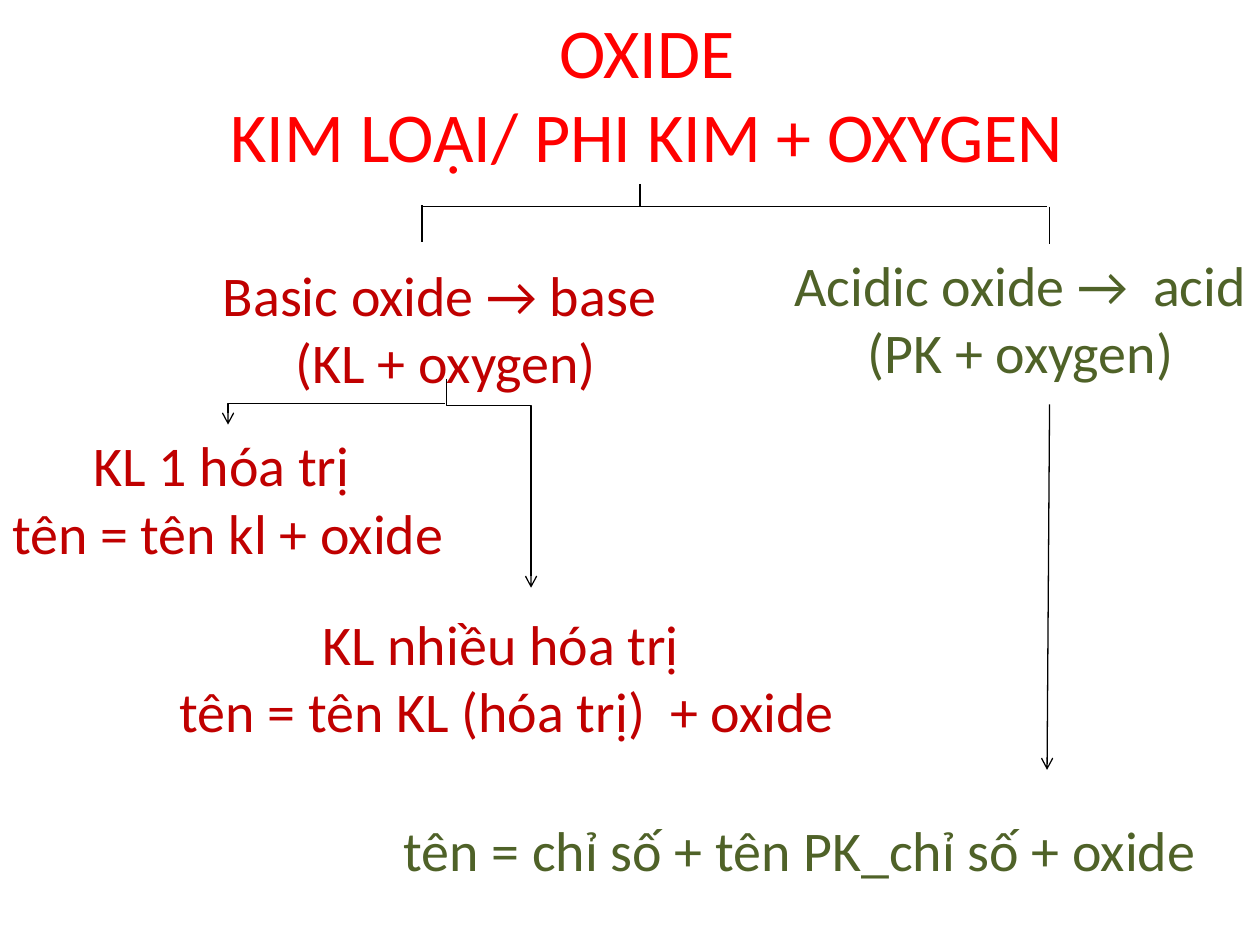
"""Build the slide that classifies oxides and gives their naming rules."""
from typing import NamedTuple

from lxml import etree
from pptx import Presentation
from pptx.dml.color import RGBColor
from pptx.enum.shapes import MSO_CONNECTOR
from pptx.enum.text import MSO_AUTO_SIZE, PP_ALIGN
from pptx.oxml.ns import qn
from pptx.util import Inches, Pt

STRAIGHT, ELBOW = MSO_CONNECTOR.STRAIGHT, MSO_CONNECTOR.ELBOW
CENTER = PP_ALIGN.CENTER
NO_FIT = MSO_AUTO_SIZE.NONE
RED, DARK_RED, GREEN, BLACK = "FF0000", "C00000", "4F6228", "000000"


class Label(NamedTuple):
    """A centred text block; lengths in inches, size in points."""
    left: float
    top: float
    width: float
    height: float
    lines: tuple[str, ...]
    color: str
    size: int = 32


class Link(NamedTuple):
    """A connector; its ends are given before it is rotated."""
    x1: float
    y1: float
    x2: float
    y2: float
    arrow: bool = False
    preset: str = "line"
    rotation: int = 0
    bend: float | None = None


LABELS = [
    Label(1.6, 0.02, 7.07, 1.45, ("OXIDE", "KIM LOẠI/ PHI KIM + OXYGEN"), RED, 40),
    Label(1.14, 2.02, 4.8, 1.18, ("Basic oxide → base ", "(KL + oxygen)"), DARK_RED),
    Label(5.7, 1.94, 4.8, 1.18, ("Acidic oxide →  acid", "(PK + oxygen)"), GREEN),
    Label(-0.59, 3.37, 4.8, 1.72, ("KL 1 hóa trị ", "tên = tên kl + oxide"), DARK_RED),
    Label(2.71, 6.42, 7.28, 0.64, ("tên = chỉ số + tên PK_chỉ số + oxide",), GREEN),
    Label(0.47, 4.79, 7.11, 1.72,
          ("KL nhiều hóa trị ", "tên = tên KL (hóa trị)  + oxide"), DARK_RED),
]
LINKS = [
    Link(8.33, 3.21, 8.31, 6.11, arrow=True),
    Link(4.71, 3.5, 3.05, 4.17, True, "bentConnector3", 270, 0.13),
    Link(1.81, 3.37, 3.53, 3.2, True, "bentConnector2", 180),
    Link(5.08, 1.46, 5.08, 1.64),
    Link(3.35, 1.64, 8.31, 1.64),
    Link(8.33, 1.64, 8.33, 1.94),
    Link(3.35, 1.63, 3.35, 1.92),
]


def rgb(color: str) -> RGBColor:
    """Turn a hex string into a colour."""
    return RGBColor.from_string(color)


def add_label(s, label: Label) -> None:
    """Add a text box with one paragraph per line."""
    box = (Inches(v) for v in label[:4])
    tf = s.shapes.add_textbox(*box).text_frame
    tf.word_wrap = True
    tf.auto_size = NO_FIT
    font = {"name": "Calibri", "size": Pt(label.size)}
    for i, line in enumerate(label.lines):
        p = tf.paragraphs[0] if i == 0 else tf.add_paragraph()
        p.alignment = CENTER
        r = p.add_run()
        r.text = line
        for key, value in font.items():
            setattr(r.font, key, value)
        r.font.color.rgb = rgb(label.color)


def add_link(s, link: Link) -> None:
    """Add a thin black connector, bent or with an arrowhead as asked."""
    kind = STRAIGHT if link.preset == "line" else ELBOW
    c = s.shapes.add_connector(kind, *(Inches(v) for v in link[:4]))
    c.line.color.rgb = rgb(BLACK)
    c.line.width = Pt(0.75)
    sp_pr = c.element.spPr
    if link.arrow:
        etree.SubElement(sp_pr.find(qn("a:ln")), qn("a:tailEnd"), type="arrow")
    etree.SubElement(sp_pr, qn("a:effectLst"))
    geom = sp_pr.find(qn("a:prstGeom"))
    geom.set("prst", link.preset)
    if link.rotation:
        sp_pr.find(qn("a:xfrm")).set("rot", str(link.rotation * 60000))
    if link.bend is not None:
        etree.SubElement(geom.find(qn("a:avLst")), qn("a:gd"), name="adj1",
                         fmla=f"val {round(link.bend * 100000)}")


def main() -> None:
    """Build and save the slide."""
    prs = Presentation()
    prs.slide_width, prs.slide_height = Inches(10), Inches(7.5)
    s = prs.slides.add_slide(prs.slide_layouts[6])
    for label in LABELS:
        add_label(s, label)
    for link in LINKS:
        add_link(s, link)
    prs.save("out.pptx")


if __name__ == "__main__":
    main()
